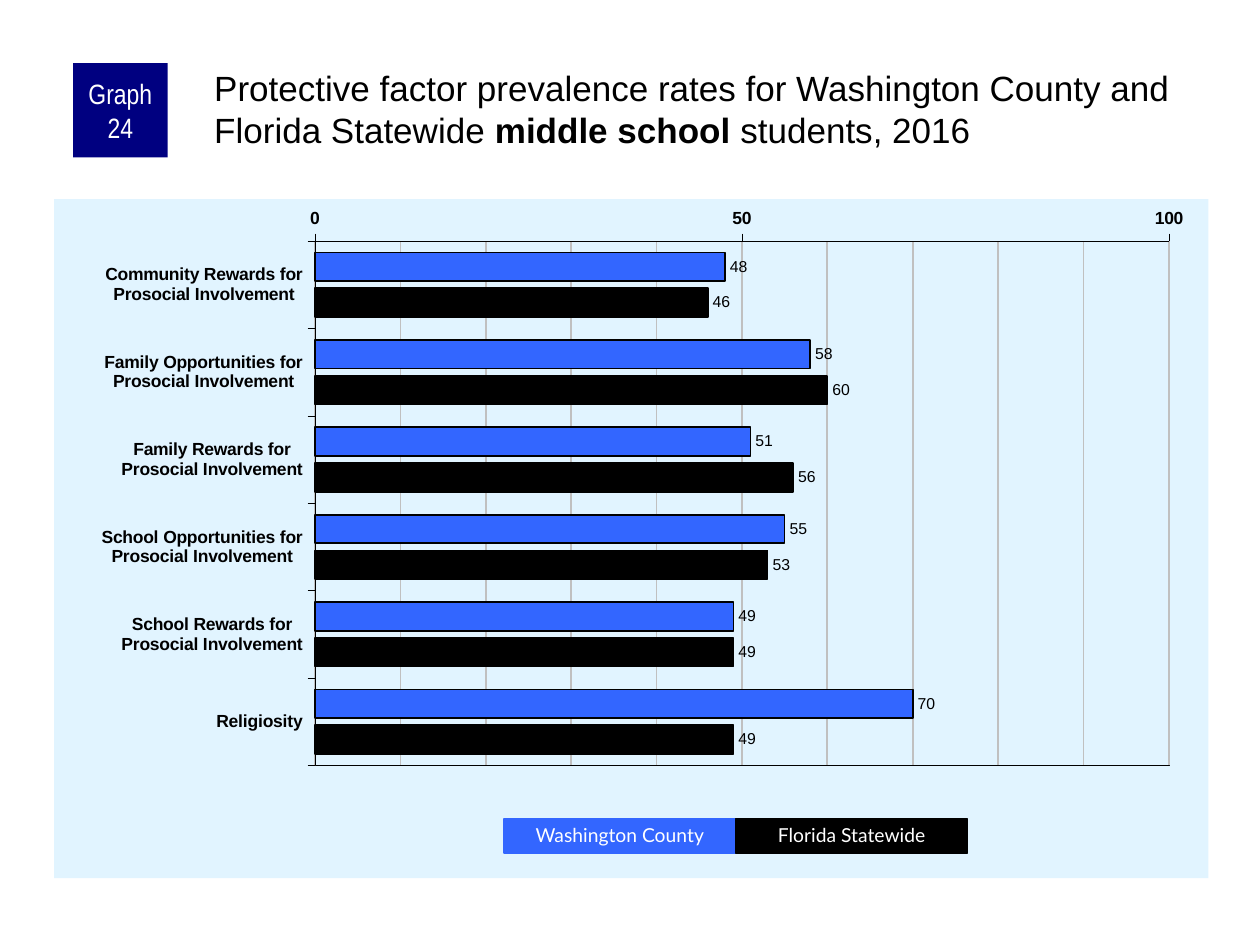
from lxml import etree
from pptx import Presentation
from pptx.chart.data import CategoryChartData
from pptx.dml.color import RGBColor
from pptx.enum.chart import XL_AXIS_CROSSES, XL_CHART_TYPE, XL_LABEL_POSITION, XL_TICK_MARK
from pptx.enum.shapes import MSO_SHAPE
from pptx.enum.text import MSO_ANCHOR, PP_ALIGN
from pptx.oxml import parse_xml
from pptx.oxml.ns import nsdecls, qn
from pptx.util import Inches, Pt

BAR = XL_CHART_TYPE.BAR_CLUSTERED
MAXIMUM = XL_AXIS_CROSSES.MAXIMUM
OUTSIDE, NO_TICK = XL_TICK_MARK.OUTSIDE, XL_TICK_MARK.NONE
OUTSIDE_END = XL_LABEL_POSITION.OUTSIDE_END
RECT = MSO_SHAPE.RECTANGLE
CENTER, LEFT = PP_ALIGN.CENTER, PP_ALIGN.LEFT
MIDDLE, TOP = MSO_ANCHOR.MIDDLE, MSO_ANCHOR.TOP

BLACK, WHITE, NAVY, BLUE = "000000", "FFFFFF", "000080", "3366FF"
PANEL, GRID = "E1F4FF", "C0C0C0"
TITLE = [
    ("Protective factor prevalence rates for Washington County and Florida Statewide ", False),
    ("middle school ", True),
    ("students, 2016", False),
]
CATEGORIES = [
    "Community Rewards for\nProsocial Involvement",
    "Family Opportunities for\nProsocial Involvement",
    "Family Rewards for\nProsocial Involvement",
    "School Opportunities for\nProsocial Involvement",
    "School Rewards for\nProsocial Involvement",
    "Religiosity",
]
SERIES = [
    ("Washington County", BLUE, (48, 58, 51, 55, 49, 70)),
    ("Florida Statewide", BLACK, (46, 60, 56, 53, 49, 49)),
]
VALUE_AXIS = dict(minimum_scale=0, maximum_scale=100, major_unit=50, minor_unit=10,
                  has_major_gridlines=True, has_minor_gridlines=True)
PLOT_BOX = dict(x=0.226, y=0.062, w=0.74, h=0.772)
KEY_LEFT, KEY_TOP, KEY_W, KEY_H = 4, 6.5, 1.84, 0.27


def rgb(value):
    return RGBColor.from_string(value)


def set_attrs(obj, **values):
    for name, value in values.items():
        setattr(obj, name, value)


def set_font(font, size, color=BLACK, name="Arial", bold=False):
    set_attrs(font, size=Pt(size), name=name, bold=bold)
    font.color.rgb = rgb(color)


def set_line(line, color, width):
    line.color.rgb = rgb(color)
    line.width = Pt(width)


def write(sp, runs, size, color, name, align, anchor, insets):
    tf = sp.text_frame
    sides = ("margin_left", "margin_top", "margin_right", "margin_bottom")
    set_attrs(tf, word_wrap=True, vertical_anchor=anchor,
              **{side: Inches(v) for side, v in zip(sides, insets)})
    p = tf.paragraphs[0]
    p.alignment = align
    for text, bold in runs:
        r = p.add_run()
        r.text = text
        set_font(r.font, size, color, name, bold)
    return p


def add_box(slide, box, fill, text, size, font, insets):
    sp = slide.shapes.add_shape(RECT, *map(Inches, box))
    sp.shadow.inherit = False
    sp.fill.solid()
    sp.fill.fore_color.rgb = rgb(fill)
    sp.line.fill.background()
    return sp, write(sp, [(text, False)], size, WHITE, font, CENTER, MIDDLE, insets)


def shape_props(fill, line):
    return parse_xml(f'<c:spPr {nsdecls("c", "a")}>{fill}<a:ln w="3175">{line}</a:ln></c:spPr>')


def solid(color):
    return f'<a:solidFill><a:srgbClr val="{color}"/></a:solidFill>'


def style_areas(chart):
    space = chart._chartSpace
    space.find(qn("c:chart")).addnext(shape_props(solid(PANEL), "<a:noFill/>"))
    area = space.find(".//" + qn("c:plotArea"))
    area.append(shape_props("<a:noFill/>", solid(BLACK)))
    old = area.find(qn("c:layout"))
    if old is not None:
        area.remove(old)
    layout = etree.Element(qn("c:layout"))
    manual = etree.SubElement(layout, qn("c:manualLayout"))
    items = dict(layoutTarget="inner", xMode="edge", yMode="edge", **PLOT_BOX)
    for tag, value in items.items():
        etree.SubElement(manual, qn(f"c:{tag}")).set("val", str(value))
    area.insert(0, layout)


def add_bars(slide):
    data = CategoryChartData()
    data.categories = CATEGORIES
    for name, _, values in SERIES:
        data.add_series(name, values)
    box = map(Inches, (0.43, 1.58, 9.16, 5.39))
    chart = slide.shapes.add_chart(BAR, *box, data).chart
    set_attrs(chart, has_legend=False, has_title=False)
    set_font(chart.font, 11.8)
    plot = chart.plots[0]
    set_attrs(plot, gap_width=80, overlap=-25, vary_by_categories=False)
    for series, (_, color, _) in zip(plot.series, SERIES):
        series.format.fill.solid()
        series.format.fill.fore_color.rgb = rgb(color)
        set_line(series.format.line, BLACK, 1)
        labels = series.data_labels
        set_attrs(labels, show_value=True, position=OUTSIDE_END)
        set_font(labels.font, 9)
    cat, val = chart.category_axis, chart.value_axis
    for axis in (cat, val):
        set_attrs(axis, major_tick_mark=OUTSIDE, minor_tick_mark=NO_TICK)
        set_font(axis.tick_labels.font, 10, bold=True)
        set_line(axis.format.line, BLACK, 0.25)
    set_attrs(cat, reverse_order=True, crosses=MAXIMUM)
    set_attrs(val, **VALUE_AXIS)
    set_line(val.major_gridlines.format.line, GRID, 1)
    minor = val._element.find(qn("c:minorGridlines"))
    minor.append(shape_props("", solid(GRID)))
    minor.find(".//" + qn("a:ln")).set("w", str(Pt(1)))
    style_areas(chart)


def main():
    """Build the protective factor slide."""
    prs = Presentation()
    set_attrs(prs, slide_width=Inches(10), slide_height=Inches(7.5))
    slide = prs.slides.add_slide(prs.slide_layouts[6])
    add_bars(slide)
    add_box(slide, (0.58, 0.5, 0.75, 0.75), NAVY, "Graph 24", 16, "Arial Narrow",
            (0.05, 0, 0.05, 0))
    title = slide.shapes.add_textbox(*map(Inches, (1.67, 0.5, 7.92, 0.83)))
    write(title, TITLE, 20, BLACK, "Arial", LEFT, TOP, (0.03, 0.03, 0, 0))
    for i, (name, color, _) in enumerate(SERIES):
        box = (KEY_LEFT + i * KEY_W, KEY_TOP, KEY_W, KEY_H)
        sp, p = add_box(slide, box, color, name, 11, "Lato", (0.1, 0.05, 0.1, 0.05))
        set_line(sp.line, color, 0.75)
        p.line_spacing = 0.9
    prs.save("out.pptx")


if __name__ == "__main__":
    main()
